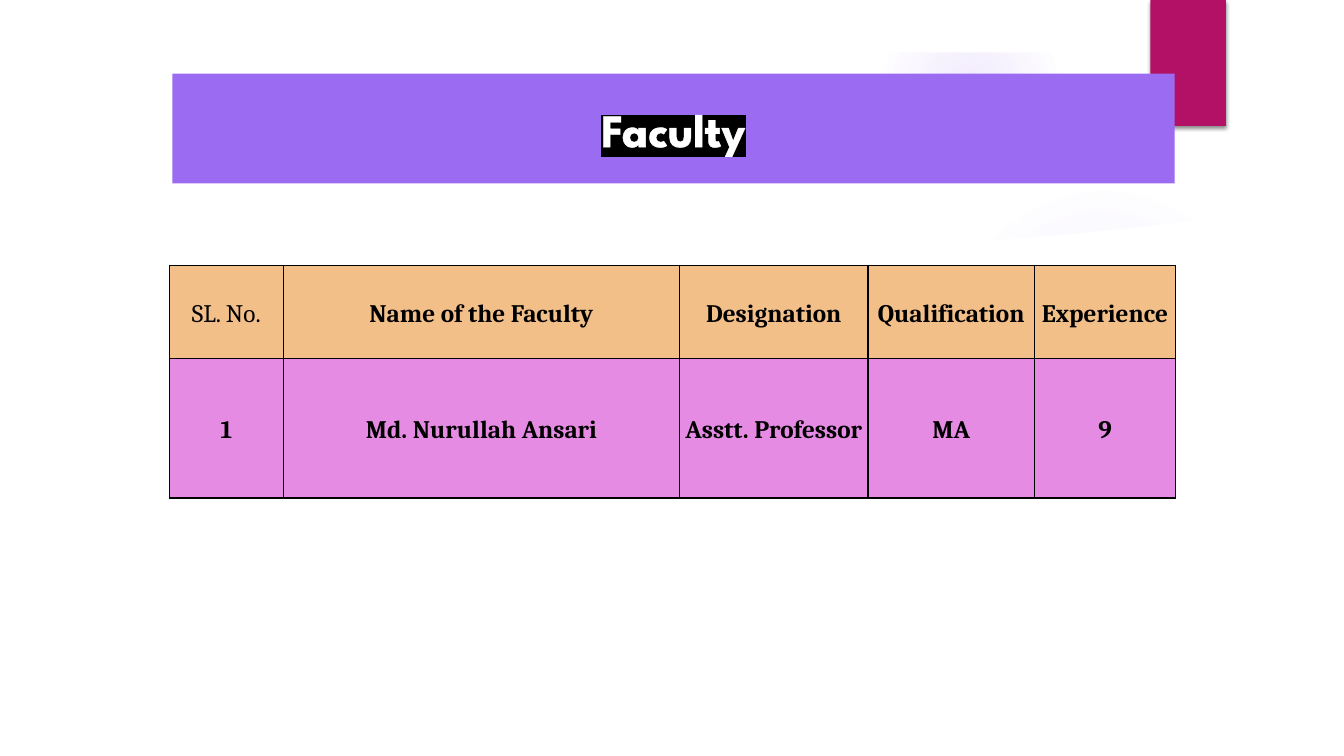
from pptx import Presentation
from pptx.dml.color import RGBColor
from pptx.enum.shapes import MSO_SHAPE
from pptx.enum.text import MSO_ANCHOR, MSO_AUTO_SIZE, PP_ALIGN
from pptx.oxml import parse_xml
from pptx.oxml.ns import nsdecls, qn
from pptx.util import Inches, Pt

PURPLE, MAGENTA, WHITE, BLACK = "9B6BF2", "B31166", "FFFFFF", "000000"
ORANGE, PINK = "F2BF89", "E68BE3"
COLUMN_WIDTHS = [1.13, 3.93, 1.87, 1.65, 1.4]
ROW_HEIGHTS = [0.93, 1.38]
FACULTY = [
    ["SL. No.", "Name of the Faculty", "Designation", "Qualification", "Experience"],
    ["1", "Md. Nurullah Ansari", "Asstt. Professor", "MA", "9"],
]
PANEL_CURVE = [(12.84, 2.04), (12, 2.17), (11.16, 2.27), (10.32, 2.35), (9.49, 2.41),
               (8.67, 2.45), (7.34, 2.48), (6.32, 2.47), (5.11, 2.44), (4.01, 2.38),
               (2.83, 2.3), (1.87, 2.21), (1.13, 2.12)]
SWEEP = [(9.34, 2.5), (10.2, 2.48), (11.6, 2.34), (12.89, 2.14), (12.83, 1.66),
         (12.13, 1.88), (11.44, 2.06), (10.75, 2.21), (10.1, 2.32), (9.3, 2.43)]


def color(value):
    return RGBColor.from_string(value)


def element(tag, content="", attributes=""):
    return parse_xml(f'<a:{tag} {nsdecls("a")} {attributes}>{content}</a:{tag}>')


def paint(shape, fill):
    shape.shadow.inherit = False
    shape.fill.solid()
    shape.fill.fore_color.rgb = color(fill)
    shape.line.fill.background()
    return shape


def add_preset(page, kind, box, fill):
    return paint(page.shapes.add_shape(kind, *map(Inches, box)), fill)


def add_outline(page, points, fill):
    start, *others = [(Inches(x), Inches(y)) for x, y in points]
    builder = page.shapes.build_freeform(*start)
    builder.add_line_segments(others, close=True)
    return paint(builder.convert_to_shape(), fill)


def add_glow(page, box, stops):
    glow = add_preset(page, MSO_SHAPE.OVAL, box, PURPLE)
    stop_list = "".join(
        f'<a:gs pos="{place * 1000}"><a:srgbClr val="{PURPLE}">'
        f'<a:alpha val="{opacity * 1000}"/></a:srgbClr></a:gs>'
        for place, opacity in stops)
    gradient = element("gradFill", f'<a:gsLst>{stop_list}</a:gsLst><a:path path="circle">'
                       '<a:fillToRect l="50000" t="50000" r="50000" b="50000"/></a:path>')
    properties = glow.element.spPr
    properties.replace(properties.find(qn("a:solidFill")), gradient)


def set_text(frame, text, size=18, font="Cambria", fill=BLACK, bold=True, spacing=None):
    para = frame.paragraphs[0]
    para.alignment = PP_ALIGN.CENTER
    para.line_spacing = spacing
    span = para.add_run()
    span.text = text
    span.font.size = Pt(size)
    span.font.name = font
    span.font.bold = bold
    span.font.color.rgb = color(fill)
    return span


def add_background(page, width, height):
    # Soft glows, partly covered by the white sweep, panel and margin
    add_glow(page, (9.41, 1.83, 3.08, 3.08), [(0, 7), (36, 6), (69, 0), (100, 0)])
    add_glow(page, (8.75, 0.01, 1.75, 1.75), [(0, 14), (36, 7), (73, 0), (100, 0)])
    sweep = add_outline(page, SWEEP, WHITE)
    sweep_color = sweep.element.spPr.find(qn("a:solidFill"))[0]
    sweep_color.append(element("alpha", attributes='val="20000"'))
    add_outline(page, [(0.5, 2.04), (0.5, 7), (12.84, 7)] + PANEL_CURVE, WHITE)
    margin = add_preset(page, MSO_SHAPE.FRAME, (0, 0, width, height), WHITE)
    margin.adjustments[0] = 0.52 / height


def add_tab(page, box):
    tab = add_preset(page, MSO_SHAPE.RECTANGLE, box, MAGENTA)
    tab.element.spPr.find(qn("a:effectLst")).append(element(
        "outerShdw", f'<a:srgbClr val="{BLACK}"><a:alpha val="45000"/></a:srgbClr>',
        f'blurRad="{Pt(3)}" dist="{Pt(2)}" dir="5400000" rotWithShape="0"'))


def add_title(page, box, text):
    title = page.shapes.title
    title.left, title.top, title.width, title.height = map(Inches, box)
    title.fill.solid()
    title.fill.fore_color.rgb = color(PURPLE)
    frame = title.text_frame
    frame.word_wrap = True
    frame.auto_size = MSO_AUTO_SIZE.NONE
    frame.vertical_anchor = MSO_ANCHOR.MIDDLE
    span = set_text(frame, text, size=33.2, font="League Spartan", fill=WHITE)
    # White letter outline and black highlight
    solid = span.font.fill._xPr.find(qn("a:solidFill"))
    white = f'<a:solidFill><a:srgbClr val="{WHITE}"/></a:solidFill>'
    solid.addprevious(element("ln", white, f'w="{Pt(1.45)}"'))
    solid.addnext(element("highlight", f'<a:srgbClr val="{BLACK}"/>'))
    # Bring the title in front of the tab
    page.shapes.element.append(title.element)


def add_borders(cell):
    properties = cell._tc.get_or_add_tcPr()
    line = f'<a:solidFill><a:srgbClr val="{BLACK}"/></a:solidFill>'
    for place, side in enumerate(["lnL", "lnR", "lnT", "lnB"]):
        properties.insert(place, element(side, line, f'w="{Pt(1)}"'))


def add_faculty_table(page, left, top):
    size = map(Inches, (left, top, sum(COLUMN_WIDTHS), sum(ROW_HEIGHTS)))
    table = page.shapes.add_table(len(FACULTY), len(COLUMN_WIDTHS), *size).table
    table.first_row = table.horz_banding = False
    for column, width in zip(table.columns, COLUMN_WIDTHS):
        column.width = Inches(width)
    for row, height, values, fill in zip(table.rows, ROW_HEIGHTS, FACULTY, [ORANGE, PINK]):
        row.height = Inches(height)
        for cell, value in zip(row.cells, values):
            cell.fill.solid()
            cell.fill.fore_color.rgb = color(fill)
            cell.vertical_anchor = MSO_ANCHOR.MIDDLE
            cell.margin_left = cell.margin_right = Inches(0.05)
            cell.margin_top = cell.margin_bottom = 0
            set_text(cell.text_frame, value, bold=value != "SL. No.", spacing=1.15)
            add_borders(cell)


def main():
    deck = Presentation()
    width, height = 13.33, 7.5
    deck.slide_width, deck.slide_height = Inches(width), Inches(height)
    page = deck.slides.add_slide(deck.slide_layouts[5])
    add_background(page, width, height)
    add_tab(page, (11.41, 0, 0.75, 1.25))
    add_title(page, (1.71, 0.73, 9.94, 1.09), "Faculty")
    add_faculty_table(page, 1.68, 2.63)
    deck.save("out.pptx")


if __name__ == "__main__":
    main()
